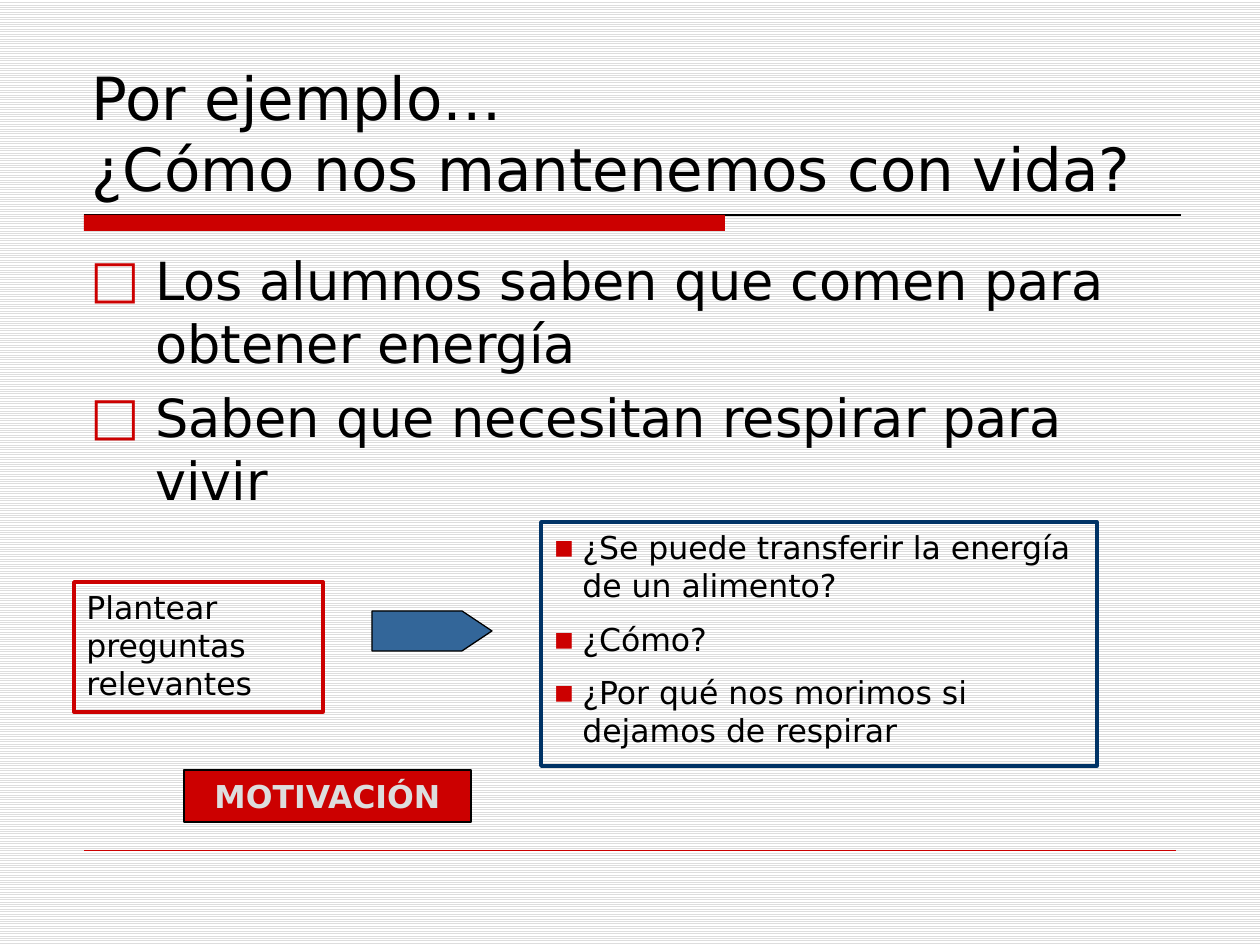
from lxml import etree
from pptx import Presentation
from pptx.dml.color import RGBColor
from pptx.enum.dml import MSO_PATTERN
from pptx.enum.shapes import MSO_CONNECTOR, MSO_SHAPE
from pptx.enum.text import MSO_ANCHOR, PP_ALIGN
from pptx.oxml.ns import qn
from pptx.util import Pt

RED = RGBColor(0xCC, 0x00, 0x00)
NAVY = RGBColor(0x00, 0x33, 0x66)
BLUE = RGBColor(0x33, 0x66, 0x99)
GREY = RGBColor(0xDD, 0xDD, 0xDD)
BLACK = RGBColor(0x00, 0x00, 0x00)
WHITE = RGBColor(0xFF, 0xFF, 0xFF)

RECT, PENTAGON = MSO_SHAPE.RECTANGLE, MSO_SHAPE.PENTAGON
STRAIGHT = MSO_CONNECTOR.STRAIGHT
STRIPES = MSO_PATTERN.LIGHT_HORIZONTAL
TOP, MIDDLE, BOTTOM = MSO_ANCHOR.TOP, MSO_ANCHOR.MIDDLE, MSO_ANCHOR.BOTTOM
LEFT, CENTER = PP_ALIGN.LEFT, PP_ALIGN.CENTER

FONT = "DejaVu Sans"
PX = 914400 / 126


def px(*lengths):
    return [round(n * PX) for n in lengths]


class Deck:
    def __init__(self, width, height):
        self.prs = Presentation()
        self.prs.slide_width, self.prs.slide_height = px(width, height)
        self.slide = self.prs.slides.add_slide(self.prs.slide_layouts[6])
        self.shapes = self.slide.shapes

    def background(self, fore, back):
        fill = self.slide.background.fill
        fill.patterned()
        fill.pattern = STRIPES
        fill.fore_color.rgb = fore
        fill.back_color.rgb = back

    def line(self, x1, x2, y, color, weight):
        s = self.shapes.add_connector(STRAIGHT, *px(x1, y, x2, y))
        s.line.color.rgb = color
        s.line.width = Pt(weight)
        etree.SubElement(s._element.spPr, qn("a:effectLst"))

    def shape(self, kind, box, fill=None, line=None, weight=0.75):
        sp = self.shapes.add_shape(kind, *px(*box))
        sp.shadow.inherit = False
        if fill is None:
            sp.fill.background()
        else:
            sp.fill.solid()
            sp.fill.fore_color.rgb = fill
        if line is None:
            sp.line.fill.background()
        else:
            sp.line.color.rgb = line
            sp.line.width = Pt(weight)
        return sp

    def text_box(self, box, paragraphs, size, **style):
        sp = self.shapes.add_textbox(*px(*box))
        self.set_text(sp, paragraphs, size, **style)

    def set_text(self, sp, paragraphs, size, color=BLACK, bold=False,
                 align=LEFT, anchor=TOP, before=0, bullet=None, indent=0):
        tf = sp.text_frame
        tf.word_wrap = True
        tf.vertical_anchor = anchor
        for i, text in enumerate(paragraphs):
            p = tf.add_paragraph() if i else tf.paragraphs[0]
            p.text = text
            p.alignment = align
            p.space_before = Pt(before)
            p.font.name = FONT
            p.font.size = Pt(size)
            p.font.bold = bold
            p.font.color.rgb = color
            if bullet:
                self.bullet(p, bullet, indent)

    def bullet(self, p, char, indent):
        pPr = p._p.get_or_add_pPr()
        offset, = px(indent)
        pPr.set("marL", str(offset))
        pPr.set("indent", str(-offset))
        mark = etree.Element(qn("a:buClr"))
        etree.SubElement(mark, qn("a:srgbClr"), val=str(RED))
        font = etree.Element(qn("a:buFont"), typeface=FONT)
        symbol = etree.Element(qn("a:buChar"), char=char)
        # Bullet properties go before the default run properties
        for element in (mark, font, symbol):
            pPr.find(qn("a:defRPr")).addprevious(element)


def main():
    deck = Deck(1260, 945)
    deck.background(GREY, WHITE)

    # Title rule and footer rule
    deck.line(84, 1181, 215, BLACK, 0.75)
    deck.shape(RECT, (84, 215, 641, 16), fill=RED)
    deck.line(84, 1176, 850, RED, 0.25)

    # Title and main points
    deck.text_box((79, 42, 1103, 168),
                  ["Por ejemplo…\v¿Cómo nos mantenemos con vida?"],
                  34, anchor=BOTTOM)
    deck.text_box((78, 242, 1103, 291),
                  ["Los alumnos saben que comen para obtener energía",
                   "Saben que necesitan respirar para vivir"],
                  30, before=6, bullet="□", indent=65)

    # Prompt, arrow and questions
    prompt = deck.shape(RECT, (74, 582, 249, 130), line=RED, weight=2)
    deck.set_text(prompt, ["Plantear preguntas relevantes"], 18)
    questions = deck.shape(RECT, (541, 522, 556, 244), line=NAVY, weight=2)
    deck.set_text(questions,
                  ["¿Se puede transferir la energía de un alimento?",
                   "¿Cómo?",
                   "¿Por qué nos morimos si dejamos de respirar"],
                  18, before=9, bullet="▪", indent=29)
    arrow = deck.shape(PENTAGON, (372, 611, 120, 40), fill=BLUE, line=BLACK)
    arrow.adjustments[0] = 0.75

    # Motivation label
    label = deck.shape(RECT, (184, 770, 287, 52), fill=RED, line=BLACK)
    deck.set_text(label, ["MOTIVACIÓN"], 18, color=GREY, bold=True,
                  align=CENTER, anchor=MIDDLE)

    deck.prs.save("out.pptx")


if __name__ == "__main__":
    main()
